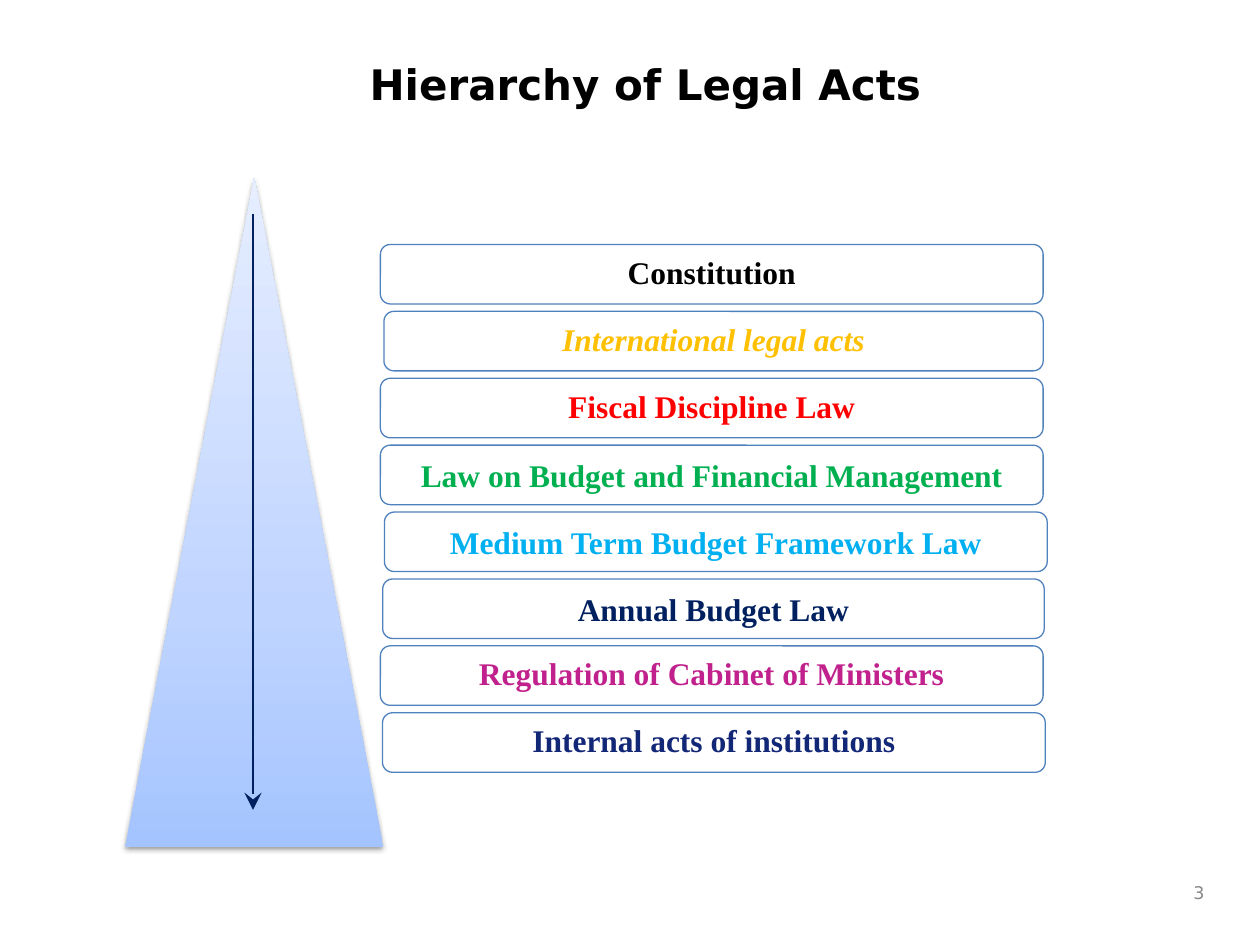
import copy

import lxml.etree
import pptx
import pptx.dml.color
import pptx.enum.shapes
import pptx.enum.text
import pptx.oxml.ns
import pptx.util

Pt = pptx.util.Pt
RGB = pptx.dml.color.RGBColor
SHAPE = pptx.enum.shapes.MSO_SHAPE
ALIGN = pptx.enum.text.PP_ALIGN
ANCHOR = pptx.enum.text.MSO_ANCHOR
qn = pptx.oxml.ns.qn

BLACK = RGB(0x00, 0x00, 0x00)
WHITE = RGB(0xFF, 0xFF, 0xFF)
GREY = RGB(0x89, 0x89, 0x89)
BORDER = RGB(0x4F, 0x81, 0xBD)
GOLD = RGB(0xFF, 0xC0, 0x00)
RED = RGB(0xFF, 0x00, 0x00)
GREEN = RGB(0x00, 0xB0, 0x50)
SKY = RGB(0x00, 0xB0, 0xF0)
NAVY = RGB(0x00, 0x20, 0x60)
MAGENTA = RGB(0xC1, 0x21, 0x8C)
INDIGO = RGB(0x13, 0x27, 0x77)
PYRAMID_STOPS = [(0, RGB(0xA4, 0xC4, 0xFF)),
                 (0.35, RGB(0xBF, 0xD4, 0xFF)),
                 (1, RGB(0xE6, 0xEE, 0xFF))]

# Text, colour, left, width, line spacing, italic
ACTS = [
    ("Constitution", BLACK, 217.4, 378.7, 0.9, False),
    ("International legal acts", GOLD, 219.4, 376.7, 0.9, True),
    ("Fiscal Discipline Law", RED, 217.4, 378.7, 0.9, False),
    ("Law on Budget and Financial Management", GREEN, 217.4, 378.7, 1.0, False),
    ("Medium Term Budget Framework Law", SKY, 219.7, 378.7, 1.0, False),
    ("Annual Budget Law", NAVY, 218.7, 378, 1.0, False),
    ("Regulation of Cabinet of Ministers", MAGENTA, 217.4, 378.7, 0.9, False),
    ("Internal acts of institutions", INDIGO, 218.6, 378.7, 0.9, False),
]
ACTS_TOP, ACT_STEP, ACT_HEIGHT = 139.7, 38.23, 34


def write(frame, text, *, font, size, color, bold=False, italic=False,
          align=ALIGN.LEFT, anchor=ANCHOR.MIDDLE, spacing=1.0, inset=(7.2, 3.6)):
    frame.word_wrap = True
    frame.auto_size = pptx.enum.text.MSO_AUTO_SIZE.NONE
    frame.vertical_anchor = anchor
    frame.margin_left = frame.margin_right = Pt(inset[0])
    frame.margin_top = frame.margin_bottom = Pt(inset[1])
    frame.text = text
    paragraph = frame.paragraphs[0]
    paragraph.alignment = align
    paragraph.line_spacing = spacing
    style = paragraph.runs[0].font
    style.name, style.size = font, Pt(size)
    style.bold, style.italic = bold, italic
    style.color.rgb = color


class LegalActsSlide:
    heading_font = "DejaVu Sans"
    act_font = "Times New Roman"

    def __init__(self, deck):
        self.slide = deck.slides.add_slide(deck.slide_layouts[5])
        self.shapes = self.slide.shapes

    def title(self, text, left, top, width, height):
        heading = self.shapes.title
        heading.left, heading.top = Pt(left), Pt(top)
        heading.width, heading.height = Pt(width), Pt(height)
        write(heading.text_frame, text, font=self.heading_font, size=24,
              color=BLACK, bold=True, anchor=ANCHOR.TOP)

    def page_number(self, text, *box):
        number = self.shapes.add_textbox(*map(Pt, box))
        write(number.text_frame, text, font=self.heading_font, size=10,
              color=GREY, align=ALIGN.RIGHT)

    def pyramid(self, *box):
        pyramid = self.shapes.add_shape(SHAPE.ISOSCELES_TRIANGLE, *map(Pt, box))
        pyramid.line.fill.background()
        pyramid.fill.gradient()
        pyramid.fill.gradient_angle = 90
        # The default gradient has two stops; a third is needed
        stop_list = pyramid.fill._xPr.find(".//" + qn("a:gsLst"))
        stop_list.insert(1, copy.deepcopy(stop_list[0]))
        for stop, (position, color) in zip(pyramid.fill.gradient_stops, PYRAMID_STOPS):
            stop.position = position
            stop.color.rgb = color
        # Soft shadow below
        pyramid.shadow.inherit = False
        effects = pyramid.element.spPr.find(qn("a:effectLst"))
        shadow = lxml.etree.SubElement(
            effects, qn("a:outerShdw"), blurRad=str(Pt(3.1)), dist=str(Pt(1.6)),
            dir="5400000", rotWithShape="0")
        black = lxml.etree.SubElement(shadow, qn("a:srgbClr"), val=str(BLACK))
        lxml.etree.SubElement(black, qn("a:alpha"), val="38000")

    def act(self, text, color, box, spacing, italic):
        bar = self.shapes.add_shape(SHAPE.ROUNDED_RECTANGLE, *map(Pt, box))
        bar.shadow.inherit = False
        bar.fill.solid()
        bar.fill.fore_color.rgb = WHITE
        fill = bar.element.spPr.find(qn("a:solidFill"))
        lxml.etree.SubElement(fill[0], qn("a:alpha"), val="90000")
        bar.line.color.rgb = BORDER
        bar.line.width = Pt(0.75)
        write(bar.text_frame, text, font=self.act_font, size=18, color=color,
              bold=True, italic=italic, align=ALIGN.CENTER, spacing=spacing,
              inset=(5, 5))

    def arrow(self, *ends):
        arrow = self.shapes.add_connector(
            pptx.enum.shapes.MSO_CONNECTOR.STRAIGHT, *map(Pt, ends))
        arrow.line.color.rgb = NAVY
        arrow.line.width = Pt(1.25)
        properties = arrow.element.spPr
        lxml.etree.SubElement(properties.find(qn("a:ln")), qn("a:tailEnd"),
                              type="stealth", w="lg", len="lg")
        lxml.etree.SubElement(properties, qn("a:effectLst"))


def main():
    deck = pptx.Presentation()
    deck.slide_width, deck.slide_height = Pt(720), Pt(540)
    page = LegalActsSlide(deck)

    # Heading and page number
    page.title("Hierarchy of Legal Acts", 204, 30, 480, 81)
    page.page_number("3", 662.4, 498, 33, 24)

    # Pyramid behind the list of acts
    page.pyramid(71.5, 101.5, 147.6, 382.4)
    for row, (text, color, left, width, spacing, italic) in enumerate(ACTS):
        box = (left, ACTS_TOP + row * ACT_STEP, width, ACT_HEIGHT)
        page.act(text, color, box, spacing, italic)

    # Descending order of legal force
    page.arrow(144.6, 122.3, 144.6, 462.8)

    deck.save("out.pptx")


if __name__ == "__main__":
    main()
